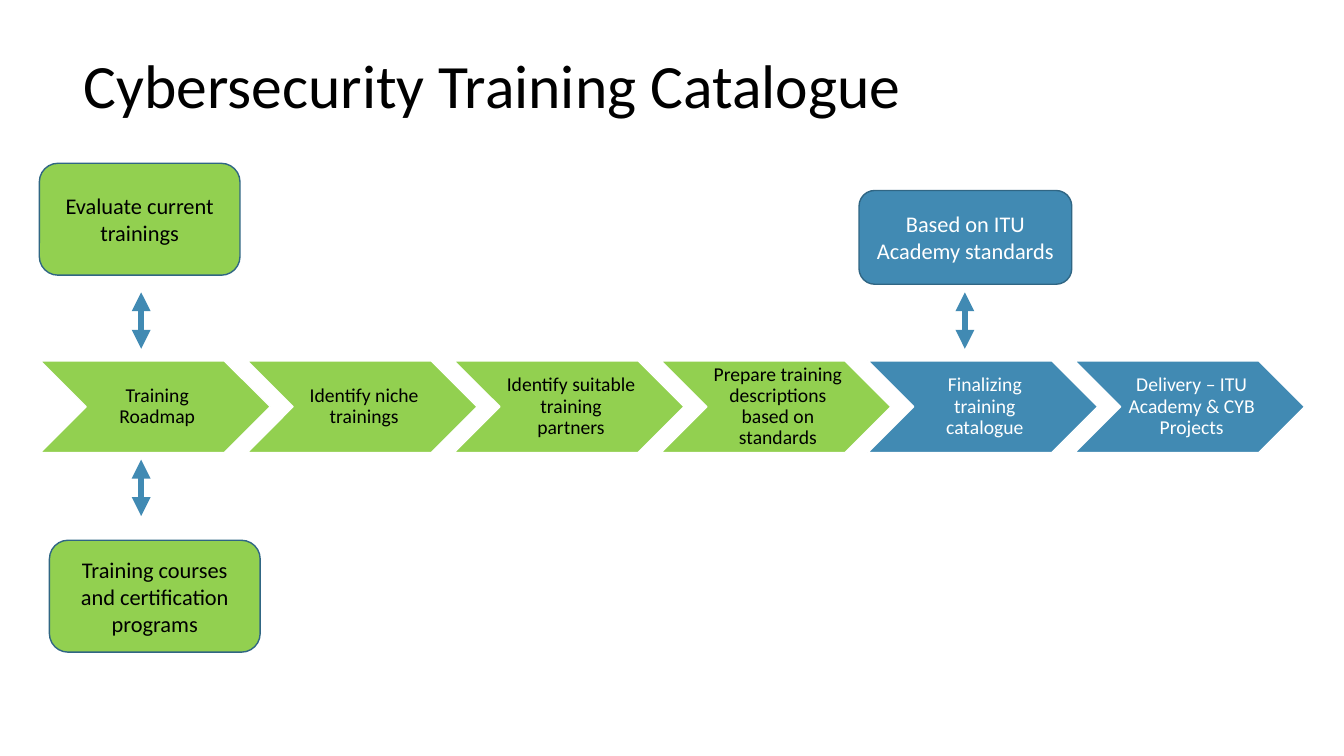
"""Build the cybersecurity training catalogue process slide."""

from dataclasses import dataclass

from lxml.etree import SubElement
from pptx import Presentation
from pptx.dml.color import RGBColor
from pptx.enum.shapes import MSO_CONNECTOR as Connector, MSO_SHAPE as Shape
from pptx.enum.text import MSO_ANCHOR as Anchor, PP_ALIGN as Align
from pptx.oxml.ns import qn
from pptx.shapes.autoshape import Shape as Box
from pptx.slide import Slide
from pptx.util import Inches, Pt

FONT = "Calibri"
GREEN, BLUE, EDGE = "92D050", "418AB3", "306684"
BLACK, WHITE = "000000", "FFFFFF"
STEP_LEFT, STEP_TOP, STEP_PITCH = 0.4, 3.58, 2.052
STEP_WIDTH, STEP_HEIGHT = 2.28, 0.91
ARROW_LENGTH = 0.56


@dataclass
class Step:
    text: str
    fill: str = GREEN
    color: str = BLACK


@dataclass
class Note:
    text: str
    left: float
    top: float
    width: float
    height: float
    fill: str = GREEN
    color: str = BLACK


@dataclass
class Arrow:
    x: float
    top: float


STEPS = [
    Step("Training Roadmap"),
    Step("Identify niche trainings"),
    Step("Identify suitable training partners"),
    Step("Prepare training descriptions based on standards"),
    Step("Finalizing training catalogue", BLUE, WHITE),
    Step("Delivery – ITU Academy & CYB Projects", BLUE, WHITE),
]
NOTES = [
    Note("Evaluate current trainings", 0.39, 1.62, 1.99, 1.11),
    Note("Training courses and certification programs", 0.49, 5.36, 2.09, 1.11),
    Note("Based on ITU Academy standards", 8.52, 1.89, 2.11, 0.93, BLUE, WHITE),
]
ARROWS = [Arrow(1.4, 2.9), Arrow(1.4, 4.56), Arrow(9.57, 2.9)]


def rgb(color: str) -> RGBColor:
    return RGBColor.from_string(color)


def write(box: Box, text: str, size: float, color: str, align: Align, spacing: float = 1.0) -> None:
    frame = box.text_frame
    frame.word_wrap = True
    frame.vertical_anchor = Anchor.MIDDLE
    para = frame.paragraphs[0]
    para.text = text
    para.alignment = align
    para.line_spacing = spacing
    para.font.name = FONT
    para.font.size = Pt(size)
    para.font.color.rgb = rgb(color)


def paint(box: Box, fill: str, line: str) -> None:
    box.shadow.inherit = False
    box.fill.solid()
    box.fill.fore_color.rgb = rgb(fill)
    box.line.color.rgb = rgb(line)
    box.line.width = Pt(1)


def add_title(page: Slide, text: str) -> None:
    box = page.shapes.add_textbox(Inches(0.73), Inches(0.15), Inches(11.5), Inches(1.45))
    write(box, text, 44, BLACK, Align.LEFT, 0.9)


def add_step(page: Slide, index: int, step: Step) -> None:
    left = STEP_LEFT + index * STEP_PITCH
    box = page.shapes.add_shape(
        Shape.CHEVRON, Inches(left), Inches(STEP_TOP), Inches(STEP_WIDTH), Inches(STEP_HEIGHT)
    )
    paint(box, step.fill, WHITE)
    frame = box.text_frame
    frame.margin_left = Inches(0.06)
    frame.margin_top = frame.margin_right = frame.margin_bottom = Inches(0.02)
    write(box, step.text, 14, step.color, Align.CENTER, 0.9)


def add_note(page: Slide, note: Note) -> None:
    box = page.shapes.add_shape(
        Shape.FLOWCHART_ALTERNATE_PROCESS,
        Inches(note.left), Inches(note.top), Inches(note.width), Inches(note.height),
    )
    paint(box, note.fill, EDGE)
    write(box, note.text, 16, note.color, Align.CENTER)


def add_arrow(page: Slide, arrow: Arrow) -> None:
    x = Inches(arrow.x)
    link = page.shapes.add_connector(
        Connector.STRAIGHT, x, Inches(arrow.top), x, Inches(arrow.top + ARROW_LENGTH)
    )
    link.line.color.rgb = rgb(BLUE)
    link.line.width = Pt(4.5)
    properties = link._element.spPr
    line = properties.find(qn("a:ln"))
    for end in ("a:headEnd", "a:tailEnd"):
        SubElement(line, qn(end), type="triangle")
    SubElement(properties, qn("a:effectLst"))


def main() -> None:
    deck = Presentation()
    deck.slide_width, deck.slide_height = Inches(13.33), Inches(7.5)
    page = deck.slides.add_slide(deck.slide_layouts[6])
    add_title(page, "Cybersecurity Training Catalogue")
    for index, step in enumerate(STEPS):
        add_step(page, index, step)
    for note in NOTES:
        add_note(page, note)
    for arrow in ARROWS:
        add_arrow(page, arrow)
    deck.save("out.pptx")


if __name__ == "__main__":
    main()
